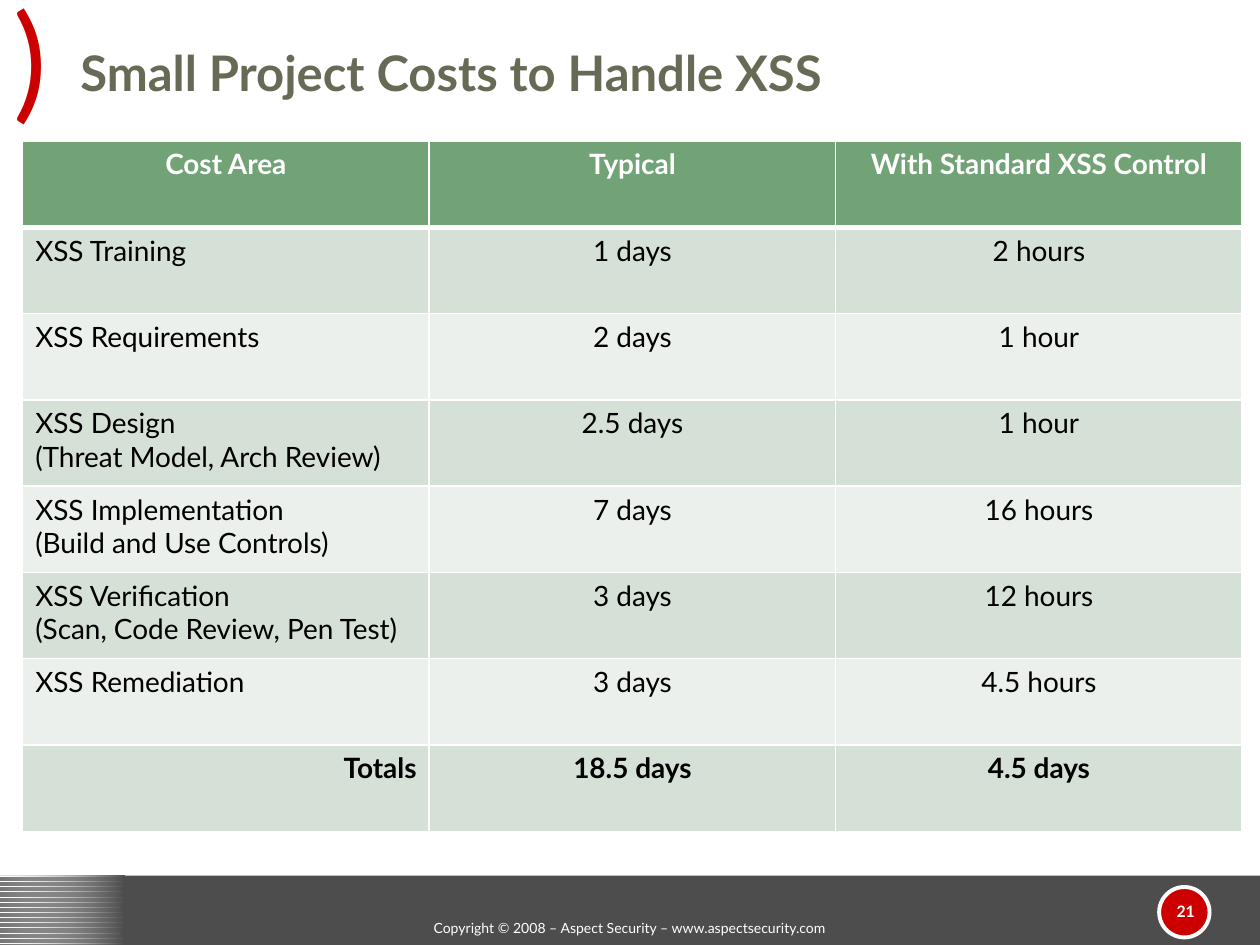
from dataclasses import dataclass

from lxml import etree
from pptx import Presentation
from pptx.dml.color import RGBColor
from pptx.enum import dml, shapes, text
from pptx.oxml import ns
from pptx.util import Inches, Pt

GRID = 0.1


@dataclass(frozen=True)
class Theme:
    font: str = "Lato"
    white: str = "FFFFFF"
    black: str = "000000"
    red: str = "CC0000"
    gray: str = "4D4D4D"
    olive: str = "676A55"
    header: str = "72A376"
    bands: tuple = ("D5E0D6", "EBF0EC")
    bracket_size: int = 72
    title_size: int = 28
    table_size: int = 16
    number_size: int = 9
    copyright_size: int = 8


@dataclass(frozen=True)
class Box:
    column: float
    row: float
    columns: float
    rows: float

    def inner(self, column, row, columns, rows):
        return Box(self.column + column, self.row + row, columns, rows)

    def place(self):
        return [Inches(GRID * n) for n in (self.column, self.row, self.columns, self.rows)]


THEME = Theme()
LEFT, CENTER, RIGHT = text.PP_ALIGN.LEFT, text.PP_ALIGN.CENTER, text.PP_ALIGN.RIGHT
COSTS = [
    ("Cost Area", "Typical", "With Standard XSS Control"),
    ("XSS Training", "1 days", "2 hours"),
    ("XSS Requirements", "2 days", "1 hour"),
    ("XSS Design\n(Threat Model, Arch Review)", "2.5 days", "1 hour"),
    ("XSS Implementation\n(Build and Use Controls)", "7 days", "16 hours"),
    ("XSS Verification\v(Scan, Code Review, Pen Test)", "3 days", "12 hours"),
    ("XSS Remediation", "3 days", "4.5 hours"),
    ("Totals", "18.5 days", "4.5 days"),
]


def rgb(color):
    return RGBColor.from_string(color)


def write(frame, words, size, color, bold=False, align=LEFT):
    frame.text = words
    for para in frame.paragraphs:
        para.alignment = align
        para.font.name = THEME.font
        para.font.size = Pt(size)
        para.font.bold = bold
        para.font.color.rgb = rgb(color)


def add_text(page, box, words, size, color, anchor=text.MSO_ANCHOR.TOP, wrap=True, **style):
    frame = page.shapes.add_textbox(*box.place()).text_frame
    frame.word_wrap = wrap
    frame.vertical_anchor = anchor
    write(frame, words, size, color, **style)
    return frame


def add_panel(page, box, color=None, kind=shapes.MSO_SHAPE.RECTANGLE):
    panel = page.shapes.add_shape(kind, *box.place())
    panel.shadow.inherit = False
    panel.line.fill.background()
    if color:
        panel.fill.solid()
        panel.fill.fore_color.rgb = rgb(color)
    return panel


def add_footer(page, box):
    add_panel(page, box, THEME.gray)

    corner = box.inner(0, 0, 9.9, 5.5)
    stripes = add_panel(page, corner).fill
    stripes.patterned()
    stripes.pattern = dml.MSO_PATTERN.DARK_HORIZONTAL
    stripes.fore_color.rgb = rgb(THEME.gray)
    stripes.back_color.rgb = rgb(THEME.white)

    fade_panel = add_panel(page, corner)
    fade = fade_panel.fill
    fade.gradient()
    fade.gradient_angle = 0
    for stop, color in zip(fade.gradient_stops, (THEME.white, THEME.gray)):
        stop.color.rgb = rgb(color)
    clear = fade_panel.element.spPr.find(".//" + ns.qn("a:srgbClr"))
    etree.SubElement(clear, ns.qn("a:alpha"), val="23000")

    add_panel(page, box.inner(14.2, 3.8, 12.1, 1.4), THEME.gray)
    badge = add_panel(page, box.inner(92, 0.9, 4, 4), THEME.red, shapes.MSO_SHAPE.OVAL)
    badge.line.color.rgb = rgb(THEME.white)
    badge.line.width = Pt(2.25)

    add_text(page, box.inner(0, 3, box.columns, 2.5),
             "Copyright © 2008 – Aspect Security – www.aspectsecurity.com",
             THEME.copyright_size, THEME.white, align=CENTER)
    add_text(page, box.inner(92, 0.8, 4.2, 4), "21", THEME.number_size, THEME.white,
             anchor=text.MSO_ANCHOR.MIDDLE, bold=True, align=CENTER)


def add_heading(page, box):
    bracket = add_text(page, box.inner(0.1, -2, 5.7, 13), ")", THEME.bracket_size, THEME.red,
                       wrap=False)
    bracket.auto_size = text.MSO_AUTO_SIZE.SHAPE_TO_FIT_TEXT
    add_text(page, box.inner(5.4, 1.7, 94.6, 6.8), "Small Project Costs to Handle XSS",
             THEME.title_size, THEME.olive, anchor=text.MSO_ANCHOR.BOTTOM, bold=True)


def set_borders(cell, widths):
    properties = cell._tc.get_or_add_tcPr()
    for position, (side, width) in enumerate(widths.items()):
        line = etree.Element(ns.qn("a:ln" + side), w=str(Pt(width)))
        fill = etree.SubElement(line, ns.qn("a:solidFill"))
        etree.SubElement(fill, ns.qn("a:srgbClr"), val=THEME.white)
        properties.insert(position, line)


def add_costs(page, box):
    last = len(COSTS) - 1
    table = page.shapes.add_table(len(COSTS), len(COSTS[0]), *box.place()).table
    for r, values in enumerate(COSTS):
        table.rows[r].height = Inches(GRID * box.rows / len(COSTS))
        color = THEME.white if r == 0 else THEME.black
        band = THEME.header if r == 0 else THEME.bands[(r - 1) % 2]
        for c, value in enumerate(values):
            cell = table.cell(r, c)
            cell.fill.solid()
            cell.fill.fore_color.rgb = rgb(band)
            set_borders(cell, {"L": 1, "R": 1, "T": 3 if r == 1 else 1, "B": 3 if r == 0 else 1})
            align = CENTER if c or r == 0 else RIGHT if r == last else LEFT
            write(cell.text_frame, value, THEME.table_size, color,
                  bold=r in (0, last), align=align)


def main():
    deck = Presentation()
    deck.slide_width, deck.slide_height = Inches(10), Inches(7.5)
    page = deck.slides.add_slide(deck.slide_layouts[6])
    add_footer(page, Box(0, 69.5, 100, 5.6))
    add_heading(page, Box(0, 0, 100, 11))
    add_costs(page, Box(1.8, 11.2, 96.8, 54.8))
    deck.save("out.pptx")


if __name__ == "__main__":
    main()
